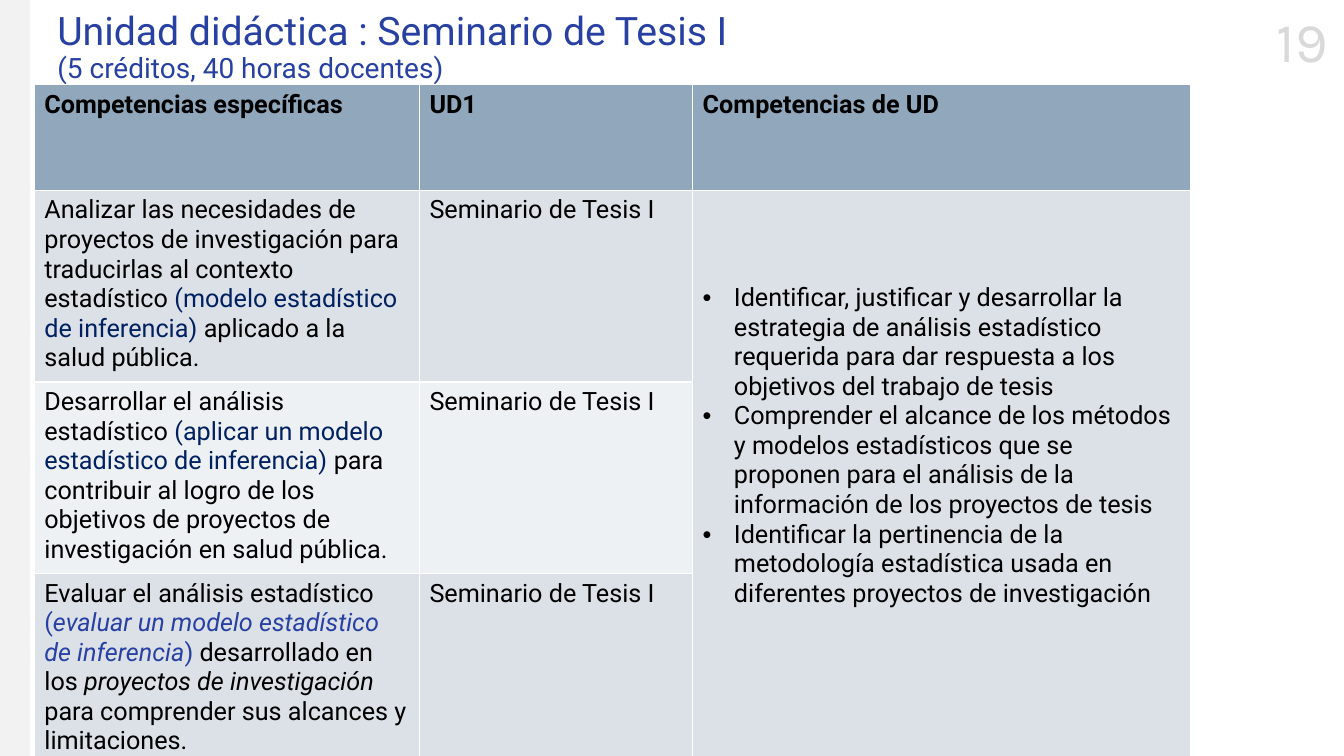
from lxml import etree
from pptx import Presentation
from pptx import util as u
from pptx.dml.color import RGBColor
from pptx.enum import shapes, text
from pptx.oxml import ns

WIDTH, HEIGHT = 13.33, 7.5
BLACK, NAVY, BLUE = "000000", "002060", "2840A1"
HEADER, BAND, LIGHT_BAND = "91A7BC", "DCE1E7", "EEF1F3"
COLUMNS = [3.82, 2.71, 4.94]
HEADER_HEIGHT, ROW_HEIGHT = 1.05, 1.86
LINE = 0.29
HANGING = 0.31

HEADINGS = ["Competencias específicas", "UD1", "Competencias de UD"]
UNIT = "Seminario de Tesis I"
# Each run: wording, colour, italic
SPECIFIC = [
    [("Analizar las necesidades de proyectos de investigación para traducirlas al contexto estadístico ", BLACK, False),
     ("(modelo estadístico de inferencia) ", NAVY, False),
     ("aplicado a la salud pública.", BLACK, False)],
    [("Desarrollar el análisis estadístico ", BLACK, False),
     ("(aplicar un modelo estadístico de inferencia) ", NAVY, False),
     ("para contribuir al logro de los objetivos de proyectos de investigación en salud pública.", BLACK, False)],
    [("Evaluar el análisis estadístico ", BLACK, False),
     ("(", BLUE, False),
     ("evaluar un modelo estadístico de inferencia", BLUE, True),
     (") ", BLUE, False),
     ("desarrollado en los ", BLACK, False),
     ("proyectos de investigación", BLACK, True),
     (" para comprender sus alcances y limitaciones.", BLACK, False)],
]
UNIT_SKILLS = [
    "Identificar, justificar y desarrollar la estrategia de análisis estadístico requerida para dar respuesta a los objetivos del trabajo de tesis",
    "Comprender el alcance de los métodos y modelos estadísticos que se proponen para el análisis de la información de los proyectos de tesis",
    "Identificar la pertinencia de la metodología estadística usada en diferentes proyectos de investigación",
]


def paint(colour_format, value):
    colour_format.rgb = RGBColor.from_string(value)


def set_font(font, size, colour=BLACK, name="Roboto", bold=False):
    font.size, font.name, font.bold = u.Pt(size), name, bold
    paint(font.color, colour)


def fill(part, value):
    part.fill.solid()
    paint(part.fill.fore_color, value)


def add_bullet(paragraph):
    properties = paragraph._p.get_or_add_pPr()
    properties.set("marL", str(u.Inches(HANGING)))
    properties.set("indent", str(-u.Inches(HANGING)))
    etree.SubElement(properties, ns.qn("a:buFont"), typeface="Arial")
    etree.SubElement(properties, ns.qn("a:buChar"), char="•")


def add_side_band(slide, *box):
    band = slide.shapes.add_shape(shapes.MSO_SHAPE.RECTANGLE, *map(u.Inches, box))
    band.shadow.inherit = False
    fill(band, "F2F2F2")
    band.line.fill.background()


def add_page_number(slide, *box):
    frame = slide.shapes.add_textbox(*map(u.Inches, box)).text_frame
    frame.word_wrap = False
    number = frame.paragraphs[0]
    number.text = "19"
    number.alignment = text.PP_ALIGN.CENTER
    set_font(number.font, 40, "D9D9D9", "Karla")


def add_heading(slide, *box):
    frame = slide.shapes.add_textbox(*map(u.Inches, box)).text_frame
    frame.word_wrap = True
    frame.margin_top = u.Inches(0.07)
    lines = [("Unidad didáctica : Seminario de Tesis I", 28),
             ("(5 créditos, 40 horas docentes)", 20)]
    for index, (wording, size) in enumerate(lines):
        line = frame.add_paragraph() if index else frame.paragraphs[0]
        line.text = wording
        line.line_spacing = 0.9
        set_font(line.font, size, BLUE)


def write_cell(cell, wording, background, bold=False):
    fill(cell, background)
    paragraph = cell.text_frame.paragraphs[0]
    paragraph.text = wording
    set_font(paragraph.font, 18, bold=bold)


def write_specific(cell, runs, background):
    fill(cell, background)
    paragraph = cell.text_frame.paragraphs[0]
    set_font(paragraph.font, 18)
    for wording, colour, italic in runs:
        run = paragraph.add_run()
        run.text = wording
        run.font.italic = italic
        paint(run.font.color, colour)


def write_unit_skills(cell):
    fill(cell, BAND)
    cell.margin_top = u.Inches(0.05 + 3 * LINE)
    for index, skill in enumerate(UNIT_SKILLS):
        frame = cell.text_frame
        paragraph = frame.add_paragraph() if index else frame.paragraphs[0]
        paragraph.text = skill
        add_bullet(paragraph)
        set_font(paragraph.font, 18)


def add_competences(slide, left, top):
    rows = 1 + len(SPECIFIC)
    box = (left, top, sum(COLUMNS), HEADER_HEIGHT + ROW_HEIGHT * len(SPECIFIC))
    table = slide.shapes.add_table(rows, len(COLUMNS), *map(u.Inches, box)).table
    for column, width in zip(table.columns, COLUMNS):
        column.width = u.Inches(width)
    for index, row in enumerate(table.rows):
        row.height = u.Inches(ROW_HEIGHT if index else HEADER_HEIGHT)
    for column, heading in enumerate(HEADINGS):
        write_cell(table.cell(0, column), heading, HEADER, bold=True)
    for row, runs in enumerate(SPECIFIC, start=1):
        background = BAND if row % 2 else LIGHT_BAND
        write_specific(table.cell(row, 0), runs, background)
        write_cell(table.cell(row, 1), UNIT, background)
    table.cell(1, 2).merge(table.cell(rows - 1, 2))
    write_unit_skills(table.cell(1, 2))


def main():
    deck = Presentation()
    deck.slide_width, deck.slide_height = u.Inches(WIDTH), u.Inches(HEIGHT)
    slide = deck.slides.add_slide(deck.slide_layouts[6])
    add_page_number(slide, 12.54, 0.02, 0.75, 0.77)
    add_side_band(slide, 0, 0, 0.3, HEIGHT)
    add_heading(slide, 0.47, 0.05, 11.5, 1.14)
    add_competences(slide, 0.34, 0.84)
    deck.save("out.pptx")


if __name__ == "__main__":
    main()
